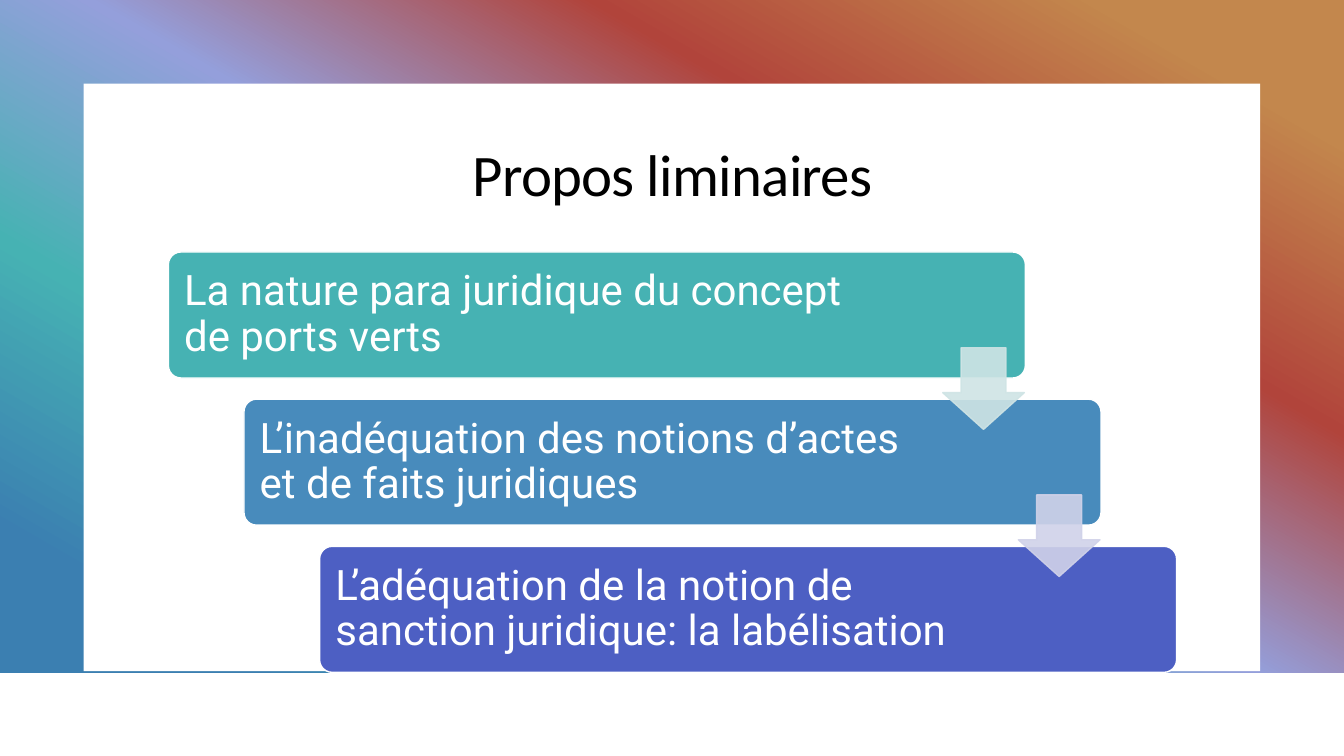
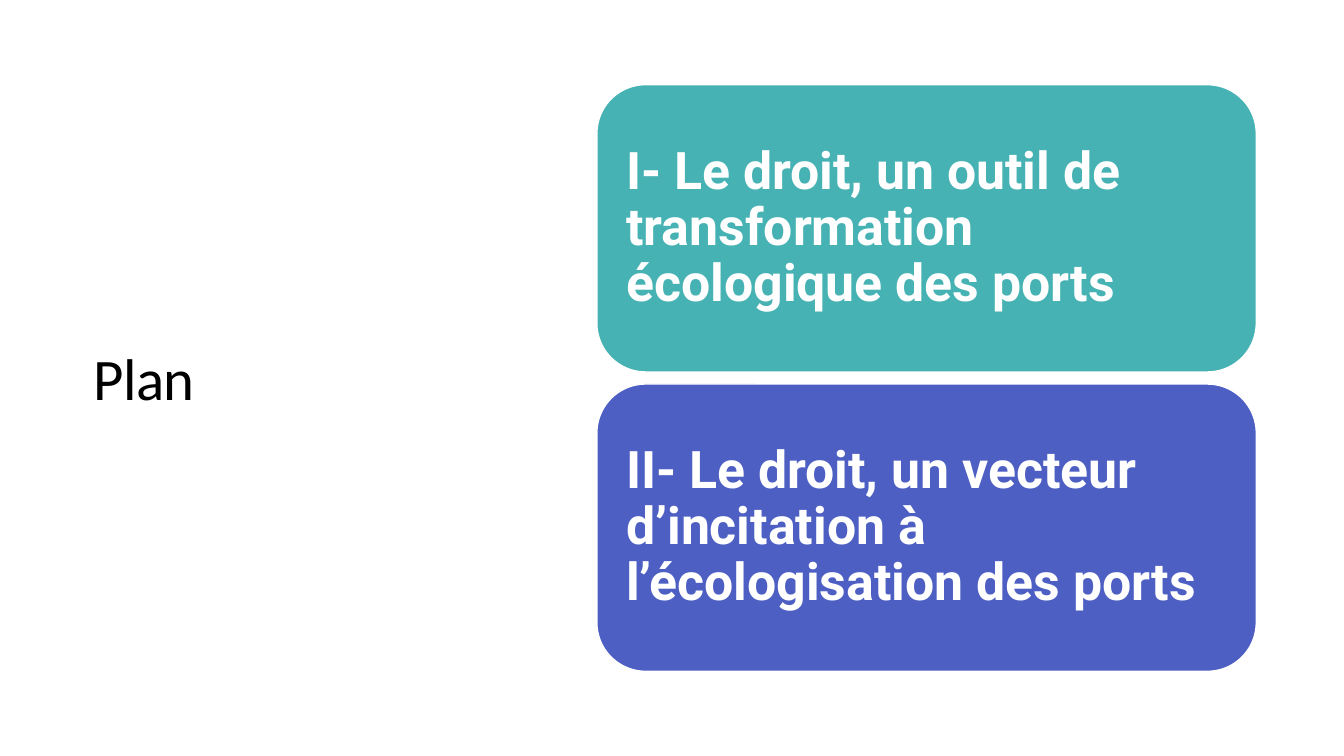
from copy import deepcopy
from dataclasses import dataclass

from lxml.etree import SubElement
from pptx import Presentation
from pptx.dml.color import RGBColor
from pptx.enum.shapes import MSO_SHAPE
from pptx.enum.text import MSO_ANCHOR, MSO_AUTO_SIZE, PP_ALIGN
from pptx.oxml.ns import qn
from pptx.presentation import Presentation as Deck
from pptx.shapes.autoshape import Shape
from pptx.slide import Slide
from pptx.util import Inches, Pt


@dataclass(frozen=True)
class Theme:
    white: str = "FFFFFF"
    black: str = "000000"
    teal: str = "46B2B3"
    blue: str = "488BBC"
    indigo: str = "4D5FC3"
    pale_teal: str = "CFE4E5"
    pale_indigo: str = "D0D2E9"
    gradient: tuple[tuple[float, str], ...] = (
        (0.1, "C3874D"), (0.3, "B1443B"), (0.5, "949FDB"), (0.7, "46B2B3"), (0.9, "3B7FB1"))
    gradient_angle: int = 240
    title_font: str = "Calibri"
    body_font: str = "Roboto"
    title_size: int = 42
    step_size: int = 30
    plan_size: int = 37


@dataclass(frozen=True)
class Box:
    left: float
    top: float
    width: float
    height: float

    def shifted(self, right: float, down: float) -> "Box":
        return Box(self.left + right, self.top + down, self.width, self.height)

    def lengths(self) -> tuple[Inches, Inches, Inches, Inches]:
        return Inches(self.left), Inches(self.top), Inches(self.width), Inches(self.height)


@dataclass(frozen=True)
class Card:
    text: str
    color: str


@dataclass(frozen=True)
class CardStyle:
    corner: float
    size: int
    bold: bool
    margin: float
    right_margin: float


THEME = Theme()
TITLE_ONLY = 5

# Slide 1: cascade of three steps
BAND = Box(0, 0, 13.33, 6.67)
PANEL = Box(0.83, 0.83, 11.67, 5.83)
STEP_BOX = Box(1.67, 2.5, 8.5, 1.25)
STEP_RIGHT, STEP_DOWN = 0.75, 1.46
ARROW_BOX = Box(9.35, 3.45, 0.81, 0.81)
STEP_STYLE = CardStyle(0.1, THEME.step_size, False, 0.12, 1.69)
STEPS = (
    Card("La nature para juridique du concept de ports verts", THEME.teal),
    Card("L’inadéquation des notions d’actes et de faits juridiques", THEME.blue),
    Card("L’adéquation de la notion de sanction juridique: la labélisation", THEME.indigo),
)
ARROW_COLORS = (THEME.pale_teal, THEME.pale_indigo)

# Slide 2: two stacked parts
PART_BOX = Box(5.92, 0.84, 6.54, 2.85)
PART_DOWN = 2.97
PART_STYLE = CardStyle(0.17, THEME.plan_size, True, 0.15, 0.15)
PARTS = (
    Card("I- Le droit, un outil de transformation écologique des ports", THEME.teal),
    Card("II- Le droit, un vecteur d’incitation à l’écologisation des ports", THEME.indigo),
)


def add_titled_slide(presentation: Deck, title: str, box: Box, alignment: PP_ALIGN) -> Slide:
    slide = presentation.slides.add_slide(presentation.slide_layouts[TITLE_ONLY])
    shape = slide.shapes.title
    shape.left, shape.top, shape.width, shape.height = box.lengths()
    frame = shape.text_frame
    frame.text = title
    frame.word_wrap = True
    frame.auto_size = MSO_AUTO_SIZE.NONE
    frame.vertical_anchor = MSO_ANCHOR.MIDDLE
    paragraph = frame.paragraphs[0]
    paragraph.alignment = alignment
    paragraph.line_spacing = 0.95
    run = paragraph.runs[0]
    run.font.name = THEME.title_font
    run.font.size = Pt(THEME.title_size)
    run.font.color.rgb = RGBColor.from_string(THEME.black)
    run.font._element.set("spc", "-50")
    return slide


def add_filled_shape(slide: Slide, kind: MSO_SHAPE, box: Box, color: str,
                     line_color: str | None = None) -> Shape:
    shape = slide.shapes.add_shape(kind, *box.lengths())
    shape.shadow.inherit = False
    shape.fill.solid()
    shape.fill.fore_color.rgb = RGBColor.from_string(color)
    if line_color is None:
        shape.line.fill.background()
    else:
        shape.line.color.rgb = RGBColor.from_string(line_color)
        shape.line.width = Pt(1)
    return shape


def apply_gradient(shape: Shape) -> None:
    shape.fill.gradient()
    shape.fill.gradient_angle = THEME.gradient_angle
    stop_list = shape.element.spPr.find(qn("a:gradFill")).find(qn("a:gsLst"))
    while len(stop_list) < len(THEME.gradient):
        stop_list.append(deepcopy(stop_list[0]))
    for stop, (position, color) in zip(shape.fill.gradient_stops, THEME.gradient):
        stop.position = position
        stop.color.rgb = RGBColor.from_string(color)


def add_card(slide: Slide, card: Card, box: Box, style: CardStyle) -> None:
    shape = add_filled_shape(slide, MSO_SHAPE.ROUNDED_RECTANGLE, box, card.color, THEME.white)
    shape.adjustments[0] = style.corner
    frame = shape.text_frame
    frame.text = card.text
    frame.word_wrap = True
    frame.vertical_anchor = MSO_ANCHOR.MIDDLE
    frame.margin_left = frame.margin_top = frame.margin_bottom = Inches(style.margin)
    frame.margin_right = Inches(style.right_margin)
    paragraph = frame.paragraphs[0]
    paragraph.alignment = PP_ALIGN.LEFT
    paragraph.line_spacing = 0.9
    font = paragraph.runs[0].font
    font.name = THEME.body_font
    font.size = Pt(style.size)
    font.bold = style.bold
    font.color.rgb = RGBColor.from_string(THEME.white)


def add_arrow(slide: Slide, box: Box, color: str) -> None:
    arrow = add_filled_shape(slide, MSO_SHAPE.DOWN_ARROW, box, color, color)
    arrow.adjustments[0] = 0.55
    arrow.adjustments[1] = 0.45
    for color_element in arrow.element.spPr.iter(qn("a:srgbClr")):
        SubElement(color_element, qn("a:alpha")).set("val", "90000")


def build_opening(presentation: Deck) -> None:
    slide = add_titled_slide(presentation, "Propos liminaires",
                             Box(1.67, 1.24, 10, 1.01), PP_ALIGN.CENTER)
    # Gradient band and white panel go behind the title
    band = add_filled_shape(slide, MSO_SHAPE.RECTANGLE, BAND, THEME.white)
    apply_gradient(band)
    panel = add_filled_shape(slide, MSO_SHAPE.RECTANGLE, PANEL, THEME.white)
    for backdrop in (band, panel):
        slide.shapes.title.element.addprevious(backdrop.element)
    # Steps, then the arrows that overlap them
    for index, step in enumerate(STEPS):
        add_card(slide, step, STEP_BOX.shifted(index * STEP_RIGHT, index * STEP_DOWN), STEP_STYLE)
    for index, color in enumerate(ARROW_COLORS):
        add_arrow(slide, ARROW_BOX.shifted(index * STEP_RIGHT, index * STEP_DOWN), color)


def build_plan(presentation: Deck) -> None:
    slide = add_titled_slide(presentation, "Plan", Box(0.83, 0.85, 4.27, 5.84), PP_ALIGN.LEFT)
    for index, part in enumerate(PARTS):
        add_card(slide, part, PART_BOX.shifted(0, index * PART_DOWN), PART_STYLE)


def main() -> None:
    presentation = Presentation()
    presentation.slide_width = Inches(13.33)
    presentation.slide_height = Inches(7.5)
    build_opening(presentation)
    build_plan(presentation)
    presentation.save("out.pptx")


if __name__ == "__main__":
    main()
